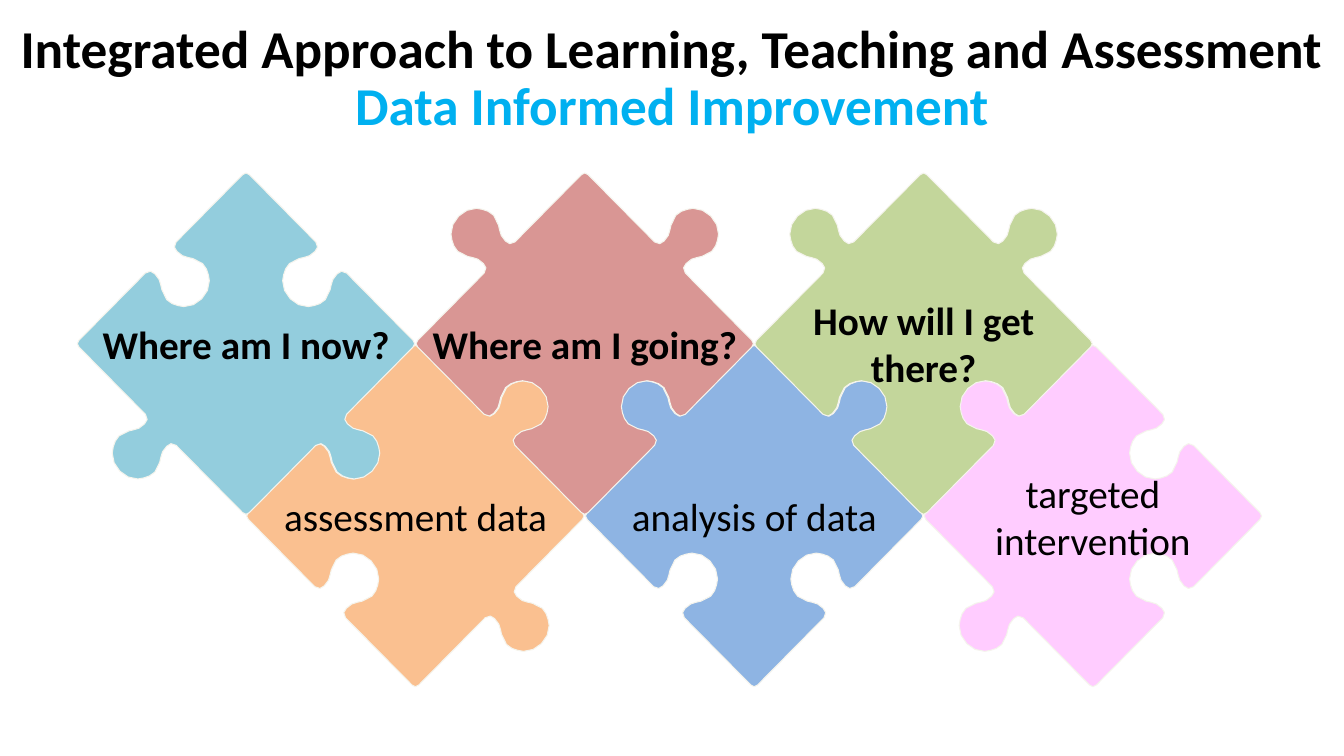
from dataclasses import dataclass

from pptx import Presentation
from pptx.dml.color import RGBColor
from pptx.enum import text
from pptx.util import Inches, Pt


@dataclass(frozen=True)
class Theme:
    font: str = "Calibri"
    title_size: int = 38
    label_size: int = 28
    ink: str = "000000"
    accent: str = "00B0F0"
    outline: str = "F5F4ED"
    teal: str = "93CDDD"
    rose: str = "D99694"
    green: str = "C3D69B"
    orange: str = "FAC090"
    blue: str = "8EB4E3"
    pink: str = "FFCCFF"


HALF_W, HALF_H = 1.69, 1.71
OUT, IN = 1, -1

TIP = [(0.5, -0.5), (2, 0)]
SHOULDER = [(41, 0), (43, 1), (43.5, 3)]
NECK_AND_KNOB = [
    (2, [(43.5, 3), (43.5, 5), (43, 7), (42, 8)]),
    (2, [(42, 8), (42, 8), (40, 10.5), (39.5, 14)]),
    (3, [(39.5, 14), (39.5, 17), (41, 19), (42.5, 21)]),
    (2, [(42.5, 21), (44.5, 23), (47, 24), (50, 24)]),
]


def bezier(curve, t):
    weights = ((1 - t) ** 3, 3 * t * (1 - t) ** 2, 3 * t * t * (1 - t), t ** 3)
    return tuple(sum(w * p[axis] for w, p in zip(weights, curve)) for axis in (0, 1))


def edge_profile():
    half = TIP + SHOULDER + [bezier(curve, i / steps)
                             for steps, curve in NECK_AND_KNOB
                             for i in range(1, steps + 1)]
    return half + [(100 - along, out) for along, out in reversed(half[:-1])]


def puzzle_outline(cx, cy, knobs):
    points = []
    for turn, knob in enumerate(knobs):
        for along, out in edge_profile():
            n = out / 100 * (knob if out > 0 else 1)
            u, v = along / 100 + n, 1 - along / 100 + n
            for _ in range(turn):
                u, v = v, -u
            points.append((Inches(cx + u * HALF_W), Inches(cy - v * HALF_H)))
    return points


class Deck:
    def __init__(self, theme):
        self.theme = theme
        self.prs = Presentation()
        self.prs.slide_width, self.prs.slide_height = Inches(13.33), Inches(7.5)
        self.s = self.prs.slides.add_slide(self.prs.slide_layouts[6])

    def style(self, p, size, color, bold):
        p.alignment = text.PP_ALIGN.CENTER
        p.font.name = self.theme.font
        p.font.size = Pt(size)
        p.font.bold = bold
        p.font.color.rgb = RGBColor.from_string(color)

    def title(self, lines):
        tf = self.s.shapes.add_textbox(0, Inches(0.17), Inches(13.33), Inches(1.4)).text_frame
        tf.word_wrap = True
        tf.text = "\n".join(line for line, _ in lines)
        for p, (_, color) in zip(tf.paragraphs, lines):
            self.style(p, self.theme.title_size, color, True)
            p.line_spacing = 0.9

    def piece(self, label, cx, cy, knobs, fill, bold):
        start, *rest = puzzle_outline(cx, cy, knobs)
        builder = self.s.shapes.build_freeform(*start)
        builder.add_line_segments(rest, close=True)
        sp = builder.convert_to_shape()
        sp.shadow.inherit = False
        sp.fill.solid()
        sp.fill.fore_color.rgb = RGBColor.from_string(fill)
        sp.line.color.rgb = RGBColor.from_string(self.theme.outline)
        sp.line.width = Pt(0.75)
        tf = sp.text_frame
        tf.word_wrap = True
        tf.vertical_anchor = text.MSO_ANCHOR.MIDDLE
        tf.margin_left = tf.margin_right = tf.margin_top = tf.margin_bottom = Inches(0.1)
        tf.text = label
        self.style(tf.paragraphs[0], self.theme.label_size, self.theme.ink, bold)

    def row(self, left, cy, pieces, bold):
        for i, (label, knobs, fill) in enumerate(pieces):
            self.piece(label, left + 3.36 * i, cy, knobs, fill, bold)


def main():
    theme = Theme()
    deck = Deck(theme)
    deck.title([
        ("Integrated Approach to Learning, Teaching and Assessment", theme.ink),
        ("Data Informed Improvement", theme.accent),
    ])
    deck.row(4.12, 5.12, [
        ("assessment data", (OUT, OUT, IN, IN), theme.orange),
        ("analysis of data", (OUT, IN, IN, OUT), theme.blue),
        ("targeted intervention", (IN, IN, OUT, OUT), theme.pink),
    ], False)
    deck.row(2.44, 3.41, [
        ("Where am I now?", (IN, OUT, OUT, IN), theme.teal),
        ("Where am I going?", (OUT, IN, IN, OUT), theme.rose),
        ("How will I get there?", (OUT, IN, IN, OUT), theme.green),
    ], True)
    deck.prs.save("out.pptx")


if __name__ == "__main__":
    main()
